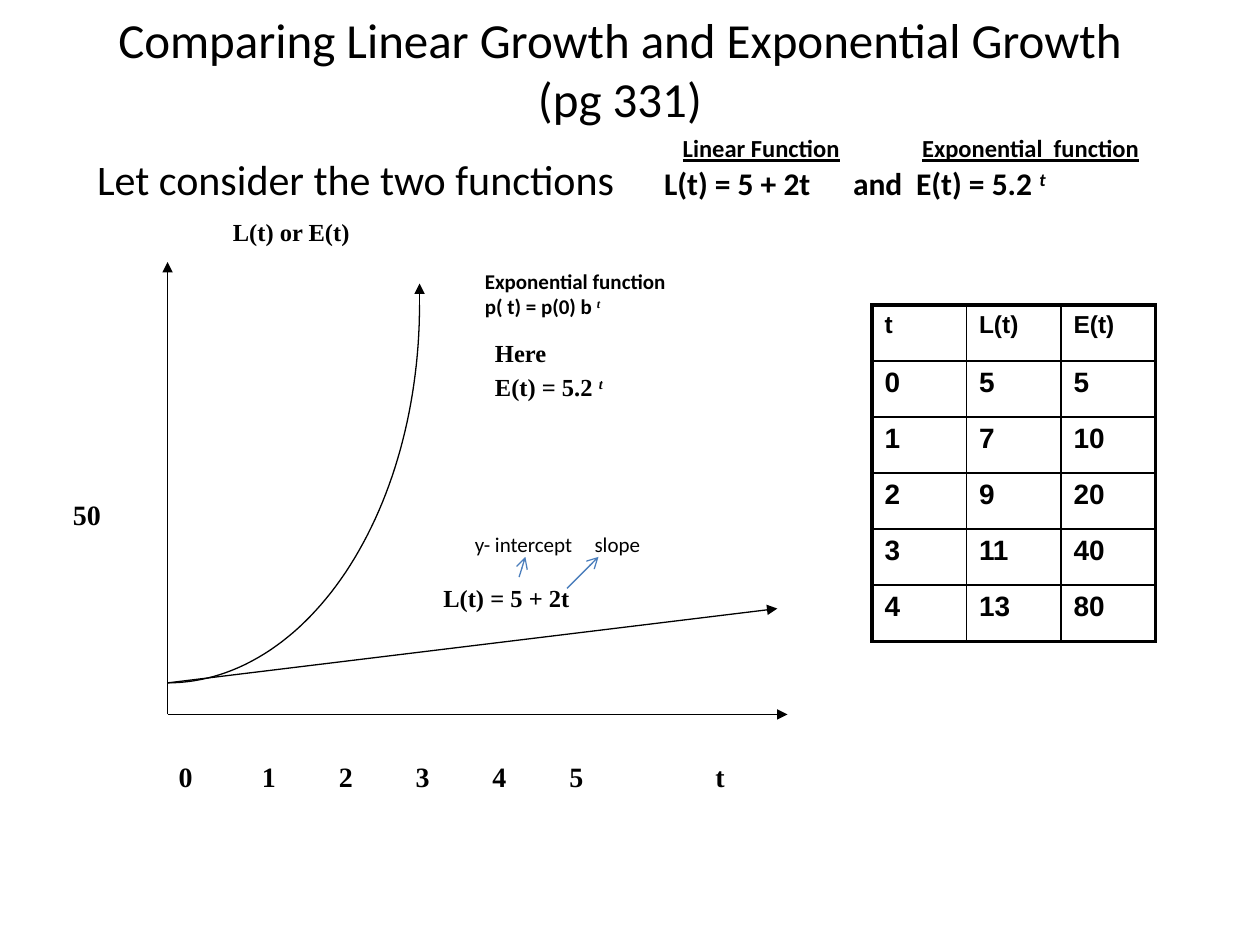
"""Build a slide comparing linear and exponential growth."""
from dataclasses import dataclass
from math import cos, pi, sin

from lxml import etree
from pptx import Presentation
from pptx.dml.color import RGBColor
from pptx.enum.shapes import MSO_CONNECTOR
from pptx.enum.text import MSO_ANCHOR, MSO_AUTO_SIZE, PP_ALIGN
from pptx.oxml.ns import qn
from pptx.util import Inches, Pt

STRAIGHT = MSO_CONNECTOR.STRAIGHT
CENTER = PP_ALIGN.CENTER
MIDDLE = MSO_ANCHOR.MIDDLE
GROW = MSO_AUTO_SIZE.SHAPE_TO_FIT_TEXT
BLACK, BLUE, WHITE = "000000", "4B7EBC", "FFFFFF"
SANS, SERIF, ARIAL = "Calibri", "Times New Roman", "Arial"


@dataclass
class Label:
    text: str
    box: tuple
    size: int = 14
    font: str = SERIF
    bold: bool = True
    tabs: tuple = ()


@dataclass
class Line:
    start: tuple
    end: tuple
    color: str = BLACK
    head: str = "triangle"


LABELS = [
    Label("L(t) = 5 + 2t", (3.42, 4.58, 1.42, 0.33)),
    Label("0\t1\t2\t3\t4\t5\tt", (1.32, 5.98, 4.55, 0.37), 16,
          tabs=(0.66, 1.27, 1.88, 2.49, 3.1, 4.26)),
    Label("50", (0.48, 3.9, 0.42, 0.37), 16),
    Label("L(t) or E(t)", (1.75, 1.67, 1.13, 0.33)),
    Label("y- intercept\tslope", (3.67, 4.17, 1.58, 0.3), 12, SANS, False, (0.95,)),
]
LINES = [
    Line((1.33, 5.67), (6.25, 5.67)),
    Line((1.33, 5.67), (1.33, 2.08)),
    Line((1.33, 5.42), (6.17, 4.83)),
    Line((3.33, 2.5), (3.33, 2.25)),
    Line((4.12, 4.58), (4.17, 4.42), BLUE, "arrow"),
    Line((4.5, 4.67), (4.75, 4.42), BLUE, "arrow"),
]


def rgb(code: str) -> RGBColor:
    """Turn a hex string into a colour."""
    return RGBColor.from_string(code)


def write(para, text: str, *, size=14, font=SANS, bold=True, italic=False,
          under=False, raised=False) -> None:
    """Add one formatted run to a paragraph."""
    run = para.add_run()
    run.text = text
    face = run.font
    face.name, face.size = font, Pt(size)
    face.bold, face.italic, face.underline = bold, italic, under
    face.color.rgb = rgb(BLACK)
    if raised:
        run._r.get_or_add_rPr().set("baseline", "30000")


def set_tabs(para, stops: tuple) -> None:
    """Give a paragraph left tab stops."""
    tabs = etree.SubElement(para._p.get_or_add_pPr(), qn("a:tabLst"))
    for stop in stops:
        etree.SubElement(tabs, qn("a:tab"), pos=str(Inches(stop)), algn="l")


def add_box(slide, box: tuple, wrap: bool = False):
    """Add a text box and return its frame."""
    frame = slide.shapes.add_textbox(*map(Inches, box)).text_frame
    frame.word_wrap, frame.auto_size = wrap, GROW
    return frame


def add_label(slide, label: Label) -> None:
    """Draw a one-line label."""
    para = add_box(slide, label.box, bool(label.tabs)).paragraphs[0]
    if label.tabs:
        set_tabs(para, label.tabs)
    write(para, label.text, size=label.size, font=label.font, bold=label.bold)


def add_line(slide, line: Line) -> None:
    """Draw a straight arrow."""
    ends = map(Inches, line.start + line.end)
    shape = slide.shapes.add_connector(STRAIGHT, *ends)
    shape.line.width = Pt(0.75)
    shape.line.color.rgb = rgb(line.color)
    etree.SubElement(shape.line._get_or_add_ln(), qn("a:tailEnd"), type=line.head)
    etree.SubElement(shape._element.spPr, qn("a:effectLst"))


def add_curve(slide) -> None:
    """Draw the exponential curve as a quarter ellipse."""
    steps = 60
    turns = [pi / 2 * n / steps for n in range(steps + 1)]
    dots = [(Inches(1.33 + 2 * sin(a)), Inches(2.42 + 3 * cos(a))) for a in turns]
    path = slide.shapes.build_freeform(*dots[0])
    path.add_line_segments(dots[1:], close=False)
    curve = path.convert_to_shape()
    curve.shadow.inherit = False
    curve.fill.background()
    curve.line.width = Pt(0.75)
    curve.line.color.rgb = rgb(BLACK)


def add_edge(cell, side: str, width: float) -> None:
    """Draw one border of a cell."""
    edge = etree.SubElement(cell._tc.get_or_add_tcPr(), qn("a:ln" + side),
                            w=str(Pt(width)))
    fill = etree.SubElement(edge, qn("a:solidFill"))
    etree.SubElement(fill, qn("a:srgbClr"), val=BLACK)


def add_values(slide) -> None:
    """Draw the table of both functions."""
    rows = [("t", "L(t)", "E(t)")]
    rows += [(t, 5 + 2 * t, 5 * 2 ** t) for t in range(5)]
    place = map(Inches, (6.92, 2.42, 2.25, 2.67))
    table = slide.shapes.add_table(len(rows), 3, *place).table
    table.first_row = table.horz_banding = False
    for r, row in enumerate(rows):
        for c, value in enumerate(row):
            cell = table.cell(r, c)
            outer = {"L": c == 0, "R": c == 2, "T": r == 0, "B": r == len(rows) - 1}
            for side, thick in outer.items():
                add_edge(cell, side, 2.25 if thick else 1)
            cell.fill.solid()
            cell.fill.fore_color.rgb = rgb(WHITE)
            para = cell.text_frame.paragraphs[0]
            para.space_before = Pt(3)
            write(para, str(value), size=16 if r else 14, font=ARIAL)


def move(shape, box: tuple) -> None:
    """Place a shape by left, top, width and height."""
    shape.left, shape.top, shape.width, shape.height = map(Inches, box)


def add_heads(slide) -> None:
    """Fill the title and the body line."""
    title, body = slide.shapes.title, slide.placeholders[1]
    move(title, (0.67, 0, 8.5, 1.08))
    title.text_frame.vertical_anchor = MIDDLE
    para = title.text_frame.paragraphs[0]
    para.alignment = CENTER
    write(para, "Comparing Linear Growth and Exponential Growth (pg 331)",
          size=28, bold=False)
    move(body, (0.67, 1.17, 9.33, 4.5))
    para = body.text_frame.paragraphs[0]
    props = para._p.get_or_add_pPr()
    props.set("marL", "0")
    props.set("indent", "0")
    etree.SubElement(props, qn("a:buNone"))
    set_tabs(para, (4.78, 6.34, 7.12))
    write(para, "Let consider the two functions", size=24, bold=False)
    write(para, "\tL(t) = 5 + 2t\tand\tE(t) = 5.2 ", size=18)
    write(para, "t", size=18, italic=True, raised=True)


def add_notes(slide) -> None:
    """Draw the labels that mix formats."""
    para = add_box(slide, (5.32, 1.01, 4.43, 0.33), True).paragraphs[0]
    set_tabs(para, (1.9,))
    write(para, "Linear Function", under=True)
    write(para, "\t")
    write(para, "Exponential  function", under=True)
    for box, top, base, size, font, gap in (
            ((3.83, 2.63, 1.07, 0.62), "Here", "E(t) = 5.2 ", 14, SERIF, 3),
            ((3.75, 2.08, 1.66, 0.5), "Exponential function", "p( t) = p(0) b ",
             12, SANS, 0)):
        frame = add_box(slide, box)
        first, second = frame.paragraphs[0], frame.add_paragraph()
        first.space_before = second.space_before = Pt(gap)
        write(first, top, size=size, font=font)
        write(second, base, size=size, font=font)
        write(second, "t", size=size, font=SERIF, italic=True, raised=True)


def main() -> None:
    """Build and save the slide."""
    deck = Presentation()
    deck.slide_width, deck.slide_height = Inches(10), Inches(7.5)
    slide = deck.slides.add_slide(deck.slide_layouts[1])
    add_heads(slide)
    add_values(slide)
    add_curve(slide)
    for line in LINES:
        add_line(slide, line)
    for label in LABELS:
        add_label(slide, label)
    add_notes(slide)
    deck.save("out.pptx")


if __name__ == "__main__":
    main()
